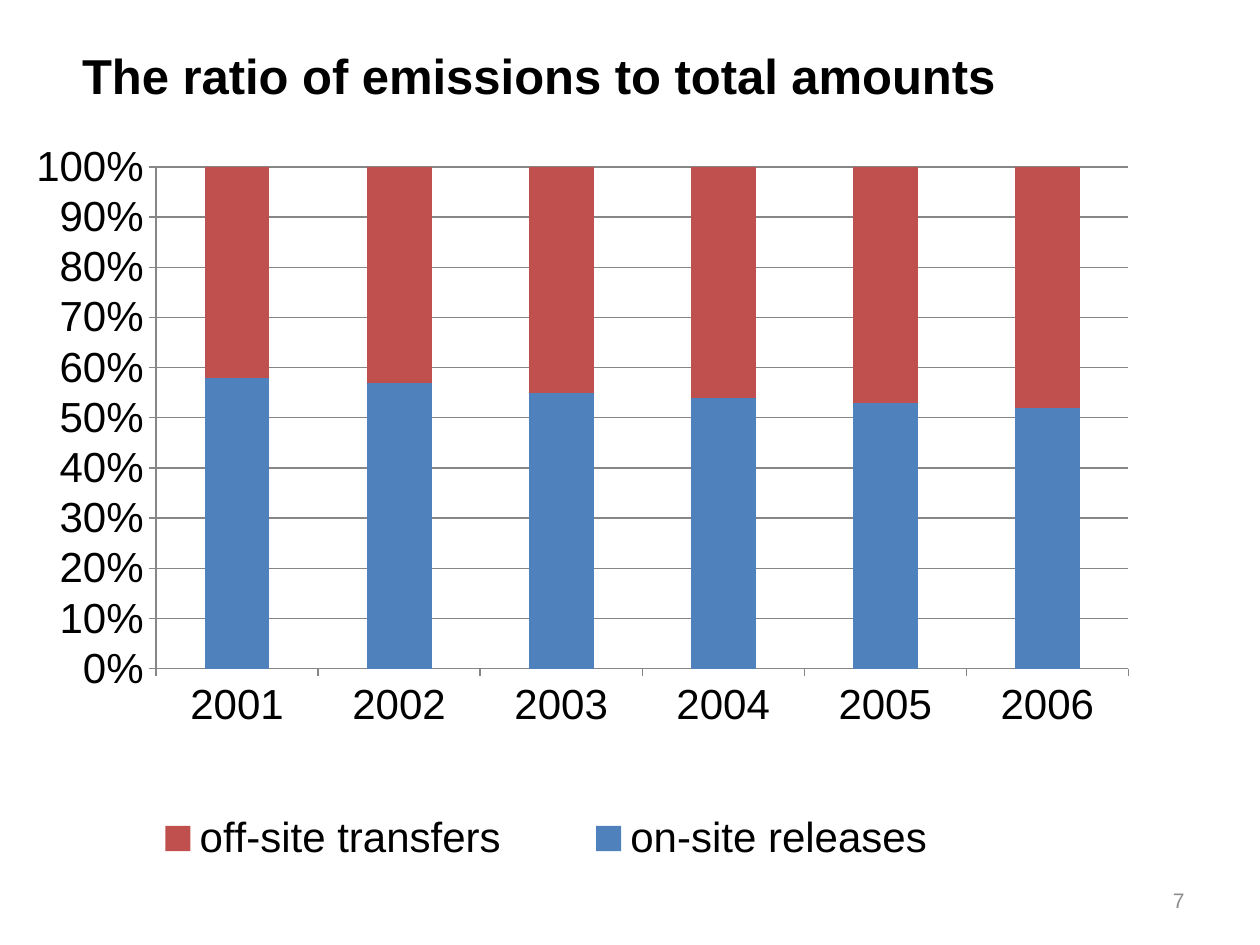
from lxml import etree
from pptx import Presentation
from pptx.chart.data import CategoryChartData
from pptx.dml.color import RGBColor
from pptx.enum.chart import XL_CHART_TYPE, XL_LEGEND_POSITION, XL_TICK_MARK
from pptx.enum.text import MSO_ANCHOR, PP_ALIGN
from pptx.oxml.ns import qn
from pptx.util import Cm, Pt

STACKED_100 = XL_CHART_TYPE.COLUMN_STACKED_100
LEGEND_RIGHT = XL_LEGEND_POSITION.RIGHT
TICK_OUTSIDE, TICK_NONE = XL_TICK_MARK.OUTSIDE, XL_TICK_MARK.NONE
LEFT, RIGHT = PP_ALIGN.LEFT, PP_ALIGN.RIGHT
TOP, MIDDLE = MSO_ANCHOR.TOP, MSO_ANCHOR.MIDDLE

FONT = "Arial"
COLORS = {"text": "000000", "number": "8C8C8C", "axis": "868686",
          "on-site releases": "4F81BD", "off-site transfers": "C0504D"}

TITLE = "The ratio of emissions to total amounts"
PAGE_NUMBER = "7"
YEARS = ["2001", "2002", "2003", "2004", "2005", "2006"]
ON_SITE = [58, 57, 55, 54, 53, 52]
SHARES = {"on-site releases": ON_SITE,
          "off-site transfers": [100 - share for share in ON_SITE]}

# Left, top, width, height in centimetres
TITLE_BOX = (1.4, 0.79, 25.98, 1.45)
NUMBER_BOX = (18.2, 17.65, 5.93, 1.01)
CHART_BOX = (0, 2.77, 24.2, 14.88)
# Fractions of the chart area
PLOT_AREA = {"x": 0.13, "y": 0.04, "w": 0.81, "h": 0.68}
LEGEND_AREA = {"x": 0.07, "y": 0.9, "w": 0.77, "h": 0.1}


def rgb(name):
    return RGBColor.from_string(COLORS[name])


def style_font(font, size, color="text", bold=False):
    font.name, font.size, font.bold = FONT, Pt(size), bold
    font.color.rgb = rgb(color)


def write_text(shape, text, box, *, size, color="text", bold=False,
               align=LEFT, anchor=TOP):
    shape.left, shape.top, shape.width, shape.height = map(Cm, box)
    frame = shape.text_frame
    frame.word_wrap = True
    frame.vertical_anchor = anchor
    paragraph = frame.paragraphs[0]
    paragraph.alignment = align
    run = paragraph.add_run()
    run.text = text
    style_font(run.font, size, color, bold)


def set_layout(parent, area, index, inner=False):
    """Pin a chart part to an area given in fractions of the chart."""
    for old in parent.findall(qn("c:layout")):
        parent.remove(old)
    layout = etree.Element(qn("c:layout"))
    manual = etree.SubElement(layout, qn("c:manualLayout"))
    settings = {"layoutTarget": "inner"} if inner else {}
    settings.update(xMode="edge", yMode="edge", **area)
    for tag, value in settings.items():
        etree.SubElement(manual, qn(f"c:{tag}")).set("val", str(value))
    parent.insert(index, layout)


def add_share_chart(slide):
    shares = CategoryChartData(number_format="0")
    shares.categories = YEARS
    for name, values in SHARES.items():
        shares.add_series(name, values)
    chart = slide.shapes.add_chart(STACKED_100, *map(Cm, CHART_BOX), shares).chart
    chart.has_title = False
    style_font(chart.font, 24)

    columns = chart.plots[0]
    columns.gap_width, columns.overlap = 150, 100
    columns.vary_by_categories = False
    for series in columns.series:
        series.format.fill.solid()
        series.format.fill.fore_color.rgb = rgb(series.name)

    year_axis, share_axis = chart.category_axis, chart.value_axis
    share_axis.minimum_scale, share_axis.maximum_scale = 0, 1
    share_axis.major_unit = 0.1
    share_axis.has_major_gridlines = True
    share_axis.tick_labels.number_format = "0%"
    share_axis.tick_labels.number_format_is_linked = False
    for axis in (year_axis, share_axis):
        axis.major_tick_mark, axis.minor_tick_mark = TICK_OUTSIDE, TICK_NONE
    for part in (year_axis, share_axis, share_axis.major_gridlines):
        part.format.line.color.rgb = rgb("axis")
        part.format.line.width = Pt(0.75)

    chart.has_legend = True
    legend = chart.legend
    legend.position = LEGEND_RIGHT
    legend.include_in_layout = False
    style_font(legend.font, 24)
    chart_xml = chart.element
    set_layout(chart_xml.find(f".//{qn('c:plotArea')}"), PLOT_AREA, 0, inner=True)
    set_layout(chart_xml.find(f".//{qn('c:legend')}"), LEGEND_AREA, 1)


def main():
    deck = Presentation()
    deck.slide_width, deck.slide_height = Cm(25.4), Cm(19.05)
    slide = deck.slides.add_slide(deck.slide_layouts.get_by_name("Title Only"))
    number = slide.shapes.add_textbox(*map(Cm, NUMBER_BOX))
    write_text(number, PAGE_NUMBER, NUMBER_BOX, size=12, color="number",
               align=RIGHT, anchor=MIDDLE)
    write_text(slide.shapes.title, TITLE, TITLE_BOX, size=28, bold=True)
    add_share_chart(slide)
    deck.save("out.pptx")


if __name__ == "__main__":
    main()
